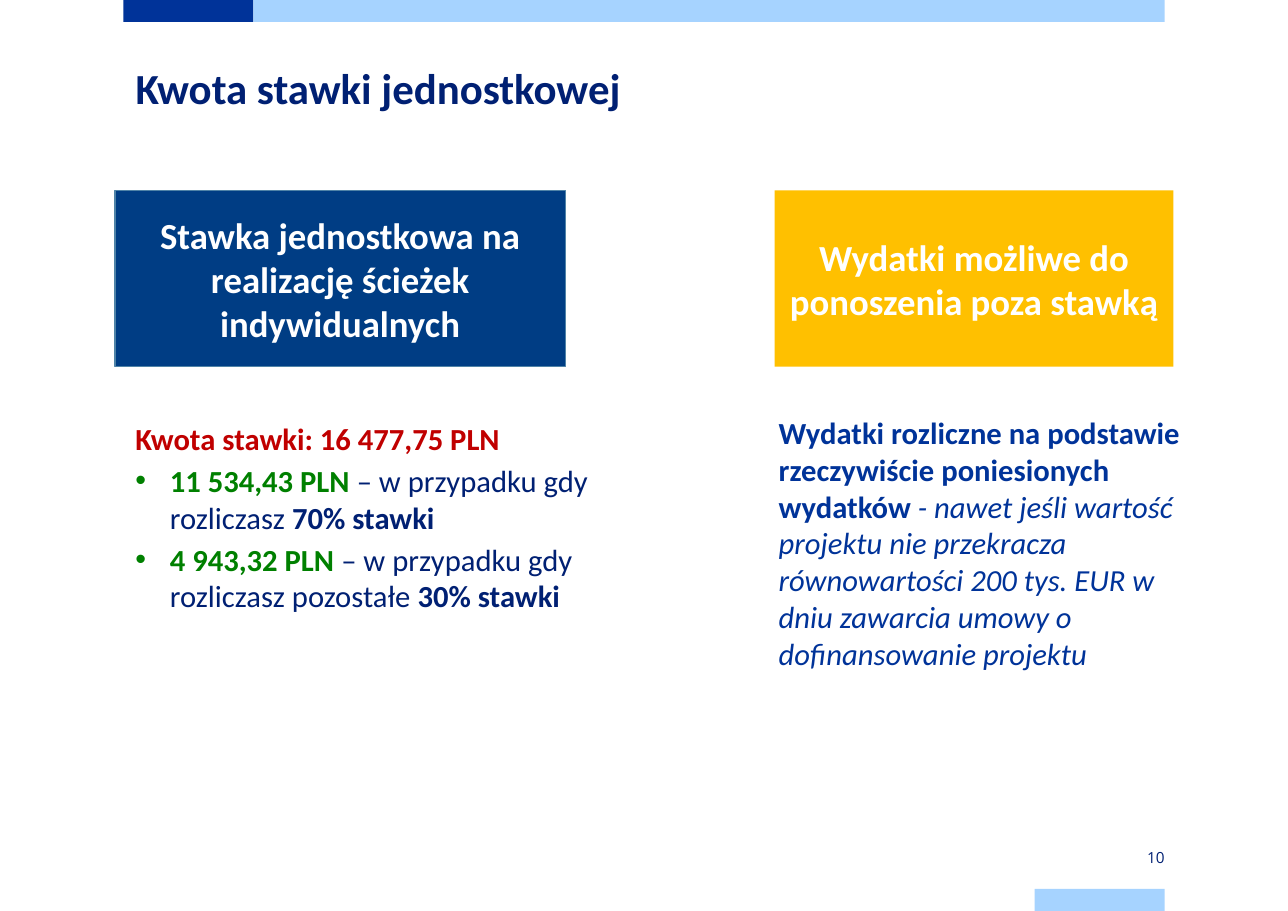
from lxml.etree import SubElement
from pptx import Presentation
from pptx.dml.color import RGBColor
from pptx.enum.shapes import MSO_SHAPE
from pptx.enum.text import MSO_ANCHOR, MSO_AUTO_SIZE, PP_ALIGN
from pptx.oxml.ns import qn
from pptx.util import Pt

COLORS = {
    "navy": "002073",
    "blue": "003399",
    "sky": "A6D3FF",
    "deep": "003D84",
    "edge": "4F83A7",
    "gold": "FFC000",
    "red": "C00000",
    "green": "008000",
    "white": "FFFFFF",
}
WIDTH, HEIGHT = 841.68, 595.44
EDGE, RIGHT = 80.64, 761.04
BAR, TAB = 14.4, 84.96


def color(name):
    return RGBColor.from_string(COLORS[name])


def add_run(para, text, size, tone, bold=False, slant=False, face="Calibri"):
    run = para.add_run()
    run.text = text
    font = run.font
    font.name, font.size = face, Pt(size)
    font.bold, font.italic = bold, slant
    font.color.rgb = color(tone)


def add_block(slide, box, fill, line=None):
    shape = slide.shapes.add_shape(MSO_SHAPE.RECTANGLE, *map(Pt, box))
    shape.shadow.inherit = False
    shape.fill.solid()
    shape.fill.fore_color.rgb = color(fill)
    if line:
        shape.line.color.rgb = color(line)
        shape.line.width = Pt(1)
    else:
        shape.line.fill.background()
    return shape


def add_text(slide, box):
    frame = slide.shapes.add_textbox(*map(Pt, box)).text_frame
    frame.word_wrap = True
    return frame


def add_bullet(para, indent):
    props = para._p.get_or_add_pPr()
    props.set("marL", str(Pt(indent)))
    props.set("indent", str(-Pt(indent)))
    SubElement(props, qn("a:buFont")).set("typeface", "Arial")
    SubElement(props, qn("a:buChar")).set("char", "•")


def add_frame(slide):
    add_block(slide, (EDGE, 0, TAB, BAR), "blue")
    add_block(slide, (EDGE + TAB, 0, RIGHT - EDGE - TAB, BAR), "sky")
    add_block(slide, (RIGHT - TAB, HEIGHT - BAR, TAB, BAR), "sky")


def add_number(slide, box, text):
    frame = add_text(slide, box)
    frame.margin_left = frame.margin_right = 0
    frame.margin_top = frame.margin_bottom = Pt(5.76)
    frame.margin_top = frame.margin_bottom = 0
    frame.vertical_anchor = MSO_ANCHOR.MIDDLE
    para = frame.paragraphs[0]
    para.alignment = PP_ALIGN.RIGHT
    add_run(para, text, 10, "navy", face="Open Sans")


def add_title(slide, box, text):
    title = slide.shapes.title
    title.left, title.top, title.width, title.height = map(Pt, box)
    frame = title.text_frame
    frame.auto_size = MSO_AUTO_SIZE.NONE
    frame.word_wrap = False
    frame.vertical_anchor = MSO_ANCHOR.TOP
    para = frame.paragraphs[0]
    para.alignment = PP_ALIGN.LEFT
    add_run(para, text, 28, "navy", bold=True)


def add_head(slide, box, text, fill, line=None):
    frame = add_block(slide, box, fill, line).text_frame
    frame.word_wrap = True
    frame.vertical_anchor = MSO_ANCHOR.MIDDLE
    para = frame.paragraphs[0]
    para.alignment = PP_ALIGN.CENTER
    add_run(para, text, 24, "white", bold=True)


def add_rates(slide, box, total, rates):
    frame = add_text(slide, box)
    para = frame.paragraphs[0]
    para.space_after = Pt(3.5)
    add_run(para, total, 20, "red", bold=True)
    for amount, case, share in rates:
        para = frame.add_paragraph()
        add_bullet(para, 22.5)
        para.space_after = Pt(3.5)
        add_run(para, amount, 20, "green", bold=True)
        add_run(para, case, 20, "navy")
        add_run(para, share, 20, "navy", bold=True)


def add_costs(slide, box, lead, rest):
    para = add_text(slide, box).paragraphs[0]
    add_run(para, lead, 20, "blue", bold=True)
    add_run(para, rest, 20, "blue", slant=True)


def main():
    deck = Presentation()
    deck.slide_width, deck.slide_height = Pt(WIDTH), Pt(HEIGHT)
    slide = deck.slides.add_slide(deck.slide_layouts[5])
    add_frame(slide)
    add_number(slide, (RIGHT - TAB, 553, TAB, BAR), "10")
    add_title(slide, (81.4, 36.7, 335, 41), "Kwota stawki jednostkowej")
    add_head(slide, (75, 124.5, 294.5, 115.2),
             "Stawka jednostkowa na realizację ścieżek indywidualnych",
             "deep", "edge")
    add_head(slide, (506.2, 124.5, 260.6, 115.2),
             "Wydatki możliwe do ponoszenia poza stawką", "gold")
    add_rates(slide, (81.4, 270.7, 339, 135.4),
              "Kwota stawki: 16 477,75 PLN", [
        ("11 534,43 PLN", " – w przypadku gdy rozliczasz ", "70% stawki"),
        ("4 943,32 PLN ", "– w przypadku gdy rozliczasz pozostałe ",
         "30% stawki"),
    ])
    add_costs(slide, (501.8, 267.1, 278.6, 177),
              "Wydatki rozliczne na podstawie rzeczywiście poniesionych "
              "wydatków ",
              "- nawet jeśli wartość projektu nie przekracza równowartości "
              "200 tys. EUR w dniu zawarcia umowy o dofinansowanie projektu")
    deck.save("out.pptx")


if __name__ == "__main__":
    main()
